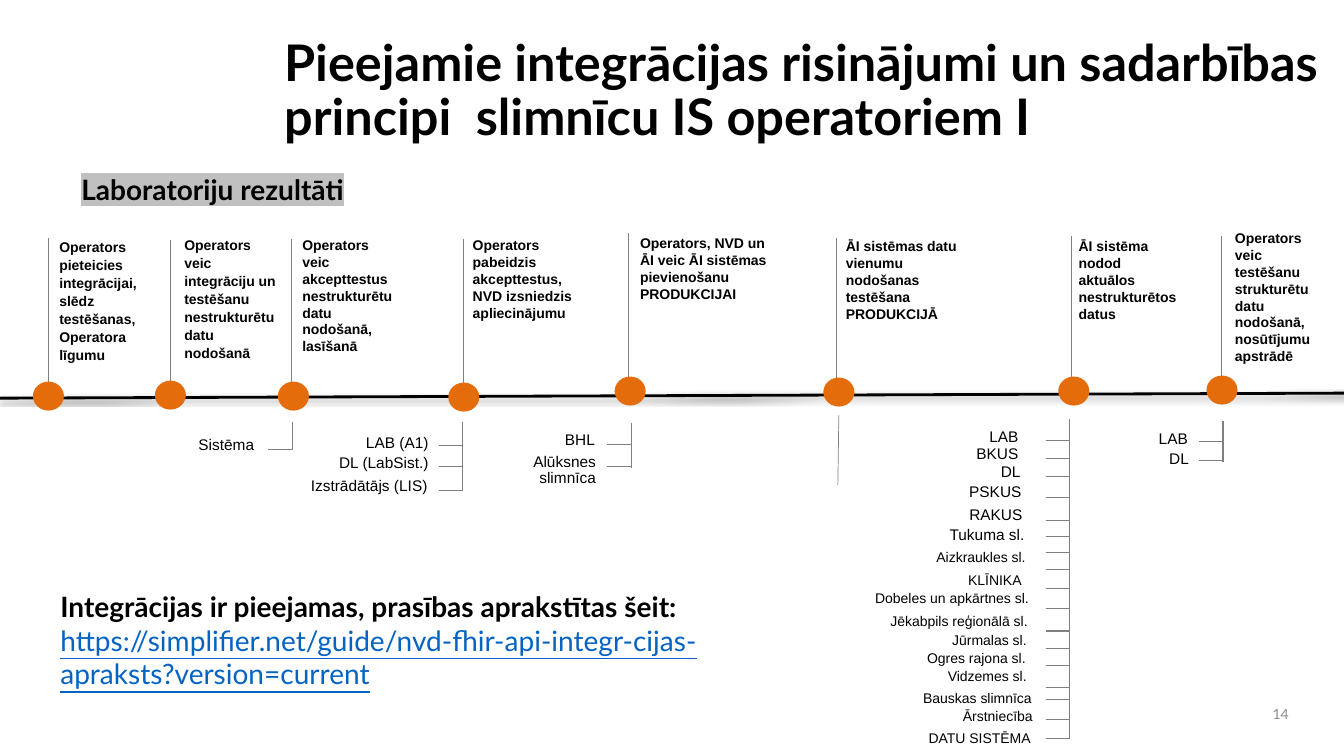
from lxml import etree
from pptx import Presentation, util as u
from pptx.dml.color import RGBColor
from pptx.enum import shapes, text
from pptx.oxml.ns import qn

BLACK = RGBColor(0x00, 0x00, 0x00)
GRAY = RGBColor(0x80, 0x80, 0x80)
PAGE_GRAY = RGBColor(0x8C, 0x8C, 0x8C)
ORANGE = RGBColor(0xE4, 0x6C, 0x0A)
LINK_BLUE = RGBColor(0x05, 0x63, 0xC1)
HIGHLIGHT = RGBColor(0xC0, 0xC0, 0xC0)

CELL = u.Inches(0.1)  # grid step; the slide is 133.3 columns by 75 rows
COLUMNS, ROWS = 133.3, 75

deck = Presentation()
deck.slide_width, deck.slide_height = int(COLUMNS * CELL), int(ROWS * CELL)
slide = deck.slides.add_slide(deck.slide_layouts[6])


def write(box, lines, color=BLACK, align=text.PP_ALIGN.LEFT, spacing=None,
          anchor=text.MSO_ANCHOR.TOP, **font_format):
    """Add a wrapped text box at a grid box (left, top, width, height)."""
    frame = slide.shapes.add_textbox(*(int(n * CELL) for n in box)).text_frame
    frame.text = lines
    frame.word_wrap = True
    frame.vertical_anchor = anchor
    for paragraph in frame.paragraphs:
        paragraph.alignment = align
        paragraph.line_spacing = spacing
        for run in paragraph.runs:
            run.font.color.rgb = color
            for key, value in font_format.items():
                setattr(run.font, key, value)
    return frame


def rule(x1, y1, x2, y2, color=GRAY, width=0.75):
    """Draw a straight line between two grid points."""
    connector = slide.shapes.add_connector(
        shapes.MSO_CONNECTOR.STRAIGHT, *(int(n * CELL) for n in (x1, y1, x2, y2)))
    connector.line.color.rgb = color
    connector.line.width = u.Pt(width)
    return etree.SubElement(connector._element.spPr, qn("a:effectLst"))


# Headings
lato_bold = {"name": "Lato", "bold": True}
write((27.2, 3.5, 106, 11.3),
      "Pieejamie integrācijas risinājumi un sadarbības principi  slimnīcu IS operatoriem I",
      spacing=0.9, anchor=text.MSO_ANCHOR.MIDDLE, size=u.Pt(36), **lato_bold)
subtitle = write((7.1, 16.6, 108.4, 4.4), "Laboratoriju rezultāti",
                 size=u.Pt(20), **lato_bold)
subtitle_format = subtitle.paragraphs[0].runs[0].font._element
highlight = etree.Element(qn("a:highlight"))
etree.SubElement(highlight, qn("a:srgbClr"), val=str(HIGHLIGHT))
subtitle_format.find(qn("a:latin")).addprevious(highlight)

# Time axis with a soft shadow below it
axis_effects = rule(0, 39.5, COLUMNS, 39, BLACK, 2)
shadow = etree.SubElement(
    axis_effects, qn("a:outerShdw"), blurRad=str(u.Pt(3.1)), dist=str(u.Pt(1.6)),
    dir="5400000", rotWithShape="0")
shadow_color = etree.SubElement(shadow, qn("a:srgbClr"), val=str(BLACK))
etree.SubElement(shadow_color, qn("a:alpha"), val="38000")

# Stages: stem (x, top), dot (left, top), text box, line spacing, text
STEM_HEIGHT, DOT_WIDTH, DOT_HEIGHT = 14.4, 2.8, 2.6
LOOSE = u.Pt(12.8)
stages = [
    ((4.8, 23.6), (3.4, 38), (4.9, 23.1, 9.9, 15.6), LOOSE,
     "Operators pieteicies integrācijai, slēdz testēšanas, Operatora līgumu"),
    ((16.9, 23.8), (15.5, 37.9), (17.3, 22.9, 11.6, 15.6), LOOSE,
     "Operators veic integrāciju un testēšanu nestrukturētu datu nodošanā"),
    ((28.9, 23.7), (27.7, 38), (29, 23, 11.4, 12.8), None,
     "Operators veic akcepttestus nestrukturētu datu nodošanā, lasīšanā"),
    ((46, 23.7), (44.6, 38.1), (45.9, 23, 12.2, 9.4), None,
     "Operators pabeidzis akcepttestus, NVD izsniedzis apliecinājumu"),
    ((62.3, 23.1), (61.1, 37.5), (62.5, 22.8, 15.1, 7.7), None,
     "Operators, NVD un ĀI veic ĀI sistēmas pievienošanu PRODUKCIJAI"),
    ((83, 23.6), (81.8, 37.6), (82.9, 23.1, 14.1, 9.4), None,
     "ĀI sistēmas datu vienumu nodošanas testēšana PRODUKCIJĀ"),
    ((106.3, 23.4), (105.1, 37.5), (106, 23.1, 12, 9.4), None,
     "ĀI sistēma nodod aktuālos nestrukturētos datus"),
    ((121.2, 23.4), (119.8, 37.4), (121.5, 22.3, 11.2, 14.5), None,
     "Operators veic testēšanu strukturētu datu nodošanā, nosūtījumu apstrādē"),
]
for (stem_x, stem_top), (dot_x, dot_y), box, spacing, stage in stages:
    rule(stem_x, stem_top, stem_x, stem_top + STEM_HEIGHT)
    dot = slide.shapes.add_shape(
        shapes.MSO_SHAPE.OVAL,
        *(int(n * CELL) for n in (dot_x, dot_y, DOT_WIDTH, DOT_HEIGHT)))
    dot.shadow.inherit = False
    dot.fill.solid()
    dot.fill.fore_color.rgb = dot.line.color.rgb = ORANGE
    dot.line.width = u.Pt(2)
    write(box, stage, spacing=spacing, name="Arial", size=u.Pt(10), bold=True)

# Branches below the axis: spine x, spine spans, tick rows
TICK = 2.4
branches = [
    (29, [(41.9, 44.6)], [44.6]),
    (45.9, [(41.9, 48.7)], [44.2, 46.3, 48.7]),
    (62.6, [(42, 46.4)], [44.1, 46.3]),
    (106.1, [(41.6, 47.3), (47.3, 51.7), (48.7, 53.1), (52.7, 58.4), (58.3, 73.3)],
     [43.7, 45.5, 47.3, 49.4, 51.6, 53.2, 54.8, 56.5, 58.4, 60.4, 62.6, 64.3,
      66, 68.2, 69.4, 71.4, 73.3]),
    (121.3, [(41.8, 45.8)], [43.8, 45.7]),
]
for spine_x, spans, ticks in branches:
    for top, bottom in spans:
        rule(spine_x, top, spine_x, bottom)
    for tick in ticks:
        rule(spine_x - TICK, tick, spine_x, tick)
rule(83.1, 48.1, 83.2, 41.2, width=0.5)

# Operators: left, top, width, name, grouped by text size
LABEL_HEIGHT = 2.6
operators = {
    11: [
        (14.1, 42.9, 12.1, "Sistēma"),
        (31.4, 42.7, 12.1, "LAB (A1)"),
        (29.6, 44.7, 13.9, "DL (LabSist.)"),
        (25.9, 47, 17.5, "Izstrādātājs (LIS)"),
        (46.4, 42.4, 13.6, "BHL"),
        (46.5, 44.6, 13.6, "Alūksnes slimnīca"),
        (89.9, 42.1, 12.1, "LAB"),
        (88.2, 43.8, 13.8, "BKUS"),
        (90.1, 45.6, 12.1, "DL"),
        (90.2, 47.6, 12.1, "PSKUS"),
        (90.3, 49.9, 12.1, "RAKUS"),
        (90.5, 51.9, 12.1, "Tukuma sl."),
        (106.7, 42.3, 12.1, "LAB"),
        (106.8, 44.3, 12.1, "DL"),
    ],
    10: [
        (84.3, 54, 18.4, "Aizkraukles sl."),
        (81.8, 56.3, 20.5, "KLĪNIKA"),
        (78.8, 58.1, 24.2, "Dobeles un apkārtnes sl."),
        (79.6, 60.4, 23.3, "Jēkabpils reģionālā sl."),
        (81.7, 62.2, 21.1, "Jūrmalas sl."),
        (81.6, 64, 21.1, "Ogres rajona sl."),
        (81.7, 65.8, 21.1, "Vidzemes sl."),
        (87.2, 68, 16.1, "Bauskas slimnīca"),
        (82.3, 69.8, 21.1, "Ārstniecība"),
        (87.1, 72, 16.1, "DATU SISTĒMA"),
    ],
}
for size, labels in operators.items():
    for left, top, width, operator in labels:
        write((left, top, width, LABEL_HEIGHT), operator, align=text.PP_ALIGN.RIGHT,
              spacing=u.Pt(11.4), name="Arial", size=u.Pt(size))

# Where to read the requirements, and the page number
guide = write((5, 58, 75.1, 11.1),
              "Integrācijas ir pieejamas, prasības aprakstītas šeit:\n"
              "https://simplifier.net/guide/nvd-fhir-api-integr-cijas-apraksts?version=current",
              size=u.Pt(20), **lato_bold)
address = guide.paragraphs[1].runs[0].font
address.color.rgb = LINK_BLUE
for key, value in {"bold": False, "underline": True}.items():
    setattr(address, key, value)
write((124.4, 69.2, 4.4, 3.3), "14", color=PAGE_GRAY, align=text.PP_ALIGN.RIGHT,
      anchor=text.MSO_ANCHOR.MIDDLE, name="Lato", size=u.Pt(10))

deck.save("out.pptx")
